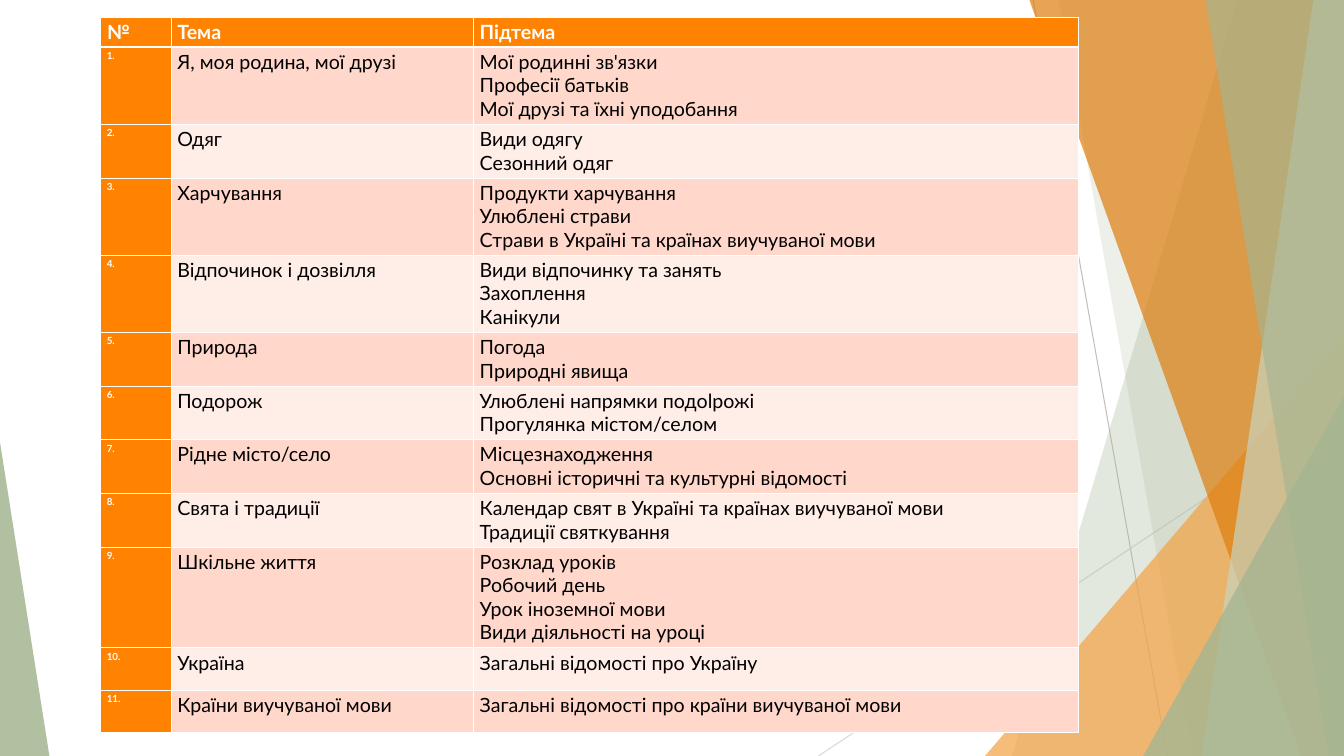
"""Build a slide with a table of language-course topics over a faceted background."""
from lxml import etree
from pptx import Presentation
from pptx.dml.color import RGBColor
from pptx.enum.shapes import MSO_CONNECTOR, MSO_SHAPE
from pptx.oxml.ns import qn
from pptx.util import Pt

STRAIGHT = MSO_CONNECTOR.STRAIGHT
TRIANGLE = MSO_SHAPE.ISOSCELES_TRIANGLE
WIDTH, HEIGHT, TOP = 960, 540, -0.6
ORANGE, WHITE, BLACK = "FF8200", "FFFFFF", "000000"
BANDS = ["FFD8CB", "FFEDE7"]
SAGE = "A5B592"


def paint(fill, color, opacity=100):
    """Give a fill a solid colour and an opacity in percent."""
    fill.solid()
    fill.fore_color.rgb = RGBColor.from_string(color)
    if opacity < 100:
        color_element = fill._xPr.find(qn("a:solidFill"))[0]
        etree.SubElement(color_element, qn("a:alpha"), val=str(opacity * 1000))


def write_cell(cell, lines, size, color, bold, background, top_width, bottom_width):
    """Write one paragraph per line and set the borders and fill of a cell."""
    cell.margin_left = cell.margin_right = Pt(4.3)
    cell.margin_top = cell.margin_bottom = Pt(2.15)
    for index, line in enumerate(lines):
        text_frame = cell.text_frame
        paragraph = text_frame.add_paragraph() if index else text_frame.paragraphs[0]
        run = paragraph.add_run()
        run.text = line
        run.font.name = "Lato"
        run.font.size = Pt(size)
        run.font.bold = bold
        run.font.color.rgb = RGBColor.from_string(color)
    properties = cell._tc.get_or_add_tcPr()
    widths = {"a:lnL": 0.6, "a:lnR": 0.6, "a:lnT": top_width, "a:lnB": bottom_width}
    for side, width in widths.items():
        border = etree.SubElement(properties, qn(side), w=str(Pt(width)))
        border_fill = etree.SubElement(border, qn("a:solidFill"))
        etree.SubElement(border_fill, qn("a:srgbClr"), val=WHITE)
    paint(cell.fill, background)


presentation = Presentation()
presentation.slide_width = Pt(WIDTH)
presentation.slide_height = Pt(HEIGHT)
slide = presentation.slides.add_slide(presentation.slide_layouts[6])
paint(slide.background.fill, WHITE)

background_lines = [
    (738, 0, 833.8, HEIGHT, "BFBFBF"),
    (WIDTH, 290.2, 584.6, HEIGHT, "D9D9D9"),
]
for start_x, start_y, end_x, end_y, color in background_lines:
    line = slide.shapes.add_connector(
        STRAIGHT, Pt(start_x), Pt(start_y), Pt(end_x), Pt(end_y))
    line.line.width = Pt(0.75)
    line.line.color.rgb = RGBColor.from_string(color)
    etree.SubElement(line._element.spPr, qn("a:effectLst"))

facets = [
    ("band", (884.2, 722.9), SAGE, 30),
    ("band", (756, 851.8), SAGE, 20),
    ("triangle", (703.6, 239.8, 256.4, 1), "F3A447", 72),
    ("band", (735.1, 929.5), "DD7E0E", 70),
    ("band", (938.2, 858.2), "C9D3BE", 70),
    ("band", (861.1, 949), SAGE, 65),
    ("triangle", (816.6, 283, 143.4, 1), SAGE, 80),
    ("triangle", (0, 316, 35.3, 0), SAGE, 85),
]
for kind, geometry, color, opacity in facets:
    if kind == "band":
        top_left, bottom_left = geometry
        builder = slide.shapes.build_freeform(Pt(top_left), Pt(TOP))
        corners = [(WIDTH, TOP), (WIDTH, HEIGHT), (bottom_left, HEIGHT)]
        builder.add_line_segments([(Pt(x), Pt(y)) for x, y in corners], close=True)
        shape = builder.convert_to_shape()
    else:
        left, top, width, apex = geometry
        shape = slide.shapes.add_shape(
            TRIANGLE, Pt(left), Pt(top), Pt(width), Pt(HEIGHT - top))
        shape.adjustments[0] = apex
    shape.shadow.inherit = False
    shape.line.fill.background()
    paint(shape.fill, color, opacity)

topics = [
    ("Я, моя родина, мої друзі",
     ["Мої родинні зв'язки", "Професії батьків", "Мої друзі та їхні уподобання"]),
    ("Одяг", ["Види одягу", "Сезонний одяг"]),
    ("Харчування",
     ["Продукти харчування", "Улюблені страви",
      "Страви в Україні та країнах виучуваної мови"]),
    ("Відпочинок і дозвілля",
     ["Види відпочинку та занять", "Захоплення", "Канікули"]),
    ("Природа", ["Погода", "Природні явища"]),
    ("Подорож", ["Улюблені напрямки подоlрожі", "Прогулянка містом/селом"]),
    ("Рідне місто/село",
     ["Місцезнаходження", "Основні історичні та культурні відомості"]),
    ("Свята і традиції",
     ["Календар свят в Україні та країнах виучуваної мови", "Традиції святкування"]),
    ("Шкільне життя",
     ["Розклад уроків", "Робочий день", "Урок іноземної мови",
      "Види діяльності на уроці"]),
    ("Україна", ["Загальні відомості про Україну"]),
    ("Країни виучуваної мови", ["Загальні відомості про країни виучуваної мови"]),
]
table = slide.shapes.add_table(
    len(topics) + 1, 3, Pt(72), Pt(12.2), Pt(698.4), Pt(510.5)).table
for column, width in zip(table.columns, [50.4, 216, 432]):
    column.width = Pt(width)

table.rows[0].height = Pt(21.4)
for column, heading in enumerate(["№", "Тема", "Підтема"]):
    write_cell(table.cell(0, column), [heading], 14, WHITE, True, ORANGE, 0.6, 1.8)

for number, (topic, subtopics) in enumerate(topics, start=1):
    table.rows[number].height = Pt(max(30.2, 4.5 + 16.9 * len(subtopics)))
    top_width = 1.8 if number == 1 else 0.6
    band = BANDS[(number - 1) % 2]
    write_cell(table.cell(number, 0), [f"{number}."], 7, WHITE, True, ORANGE,
               top_width, 0.6)
    for column, lines in enumerate([[topic], subtopics], start=1):
        write_cell(table.cell(number, column), lines, 14, BLACK, False, band,
                   top_width, 0.6)

presentation.save("out.pptx")
